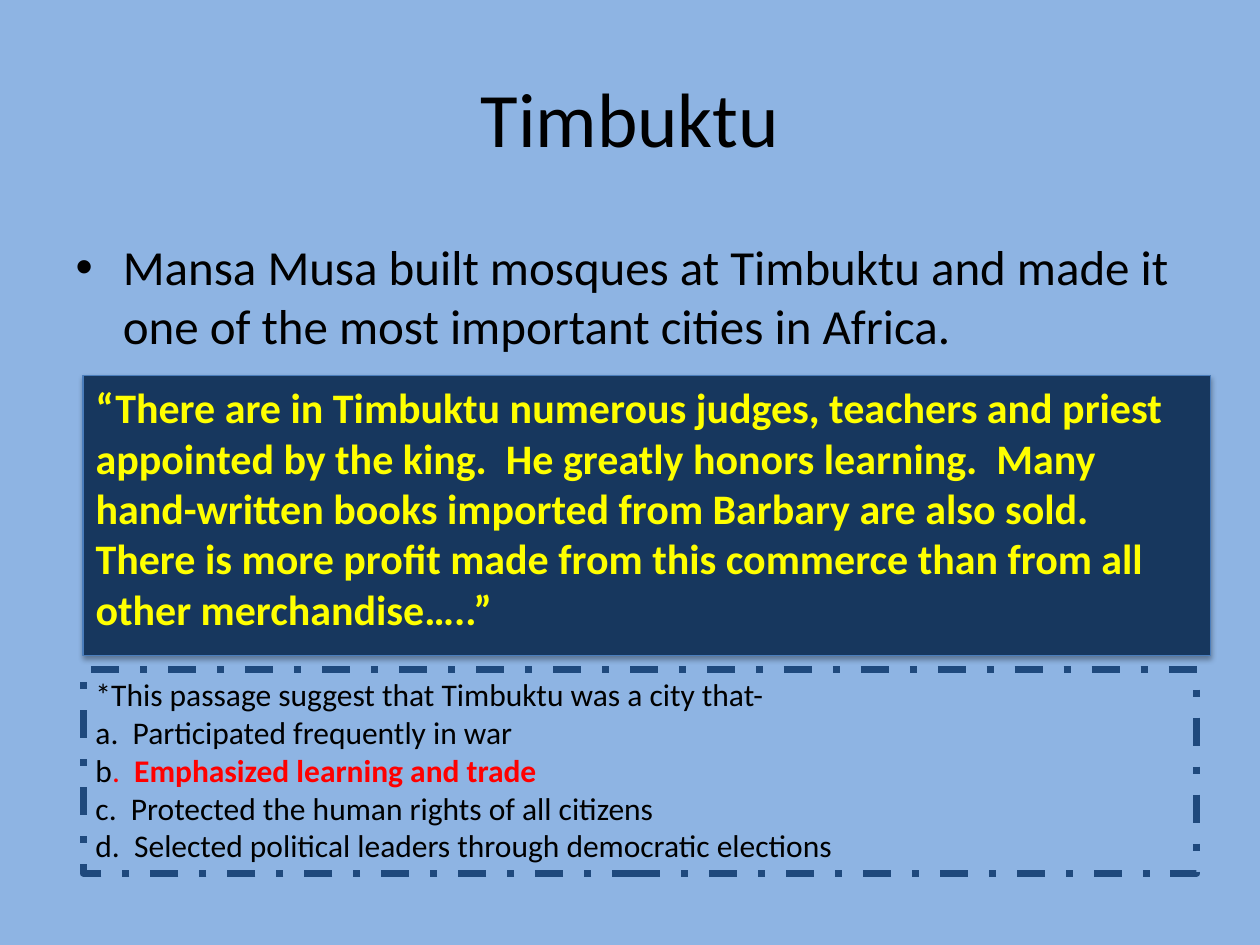
from dataclasses import dataclass

from lxml.etree import SubElement
from pptx import Presentation
from pptx.dml.color import RGBColor
from pptx.enum.dml import MSO_LINE
from pptx.enum.shapes import MSO_SHAPE
from pptx.enum.text import MSO_ANCHOR, MSO_AUTO_SIZE, PP_ALIGN
from pptx.oxml.ns import qn
from pptx.util import Inches, Pt


@dataclass(frozen=True)
class Theme:
    font: str = "Calibri"
    background: str = "8EB4E3"
    ink: str = "000000"
    panel: str = "17375E"
    panel_line: str = "4B7EBC"
    quote: str = "FFFF00"
    frame: str = "1F497D"
    answer: str = "FF0000"
    title_size: int = 44
    body_size: int = 28
    quote_size: int = 24
    option_size: int = 18


theme = Theme()


def add_text(p, text, size, color=theme.ink, bold=False):
    r = p.add_run()
    r.text = text
    r.font.name = theme.font
    r.font.size = Pt(size)
    r.font.bold = bold
    r.font.color.rgb = RGBColor.from_string(color)


def place(sp, left, top, width, height):
    sp.left, sp.top = Inches(left), Inches(top)
    sp.width, sp.height = Inches(width), Inches(height)


prs = Presentation()
prs.slide_width, prs.slide_height = Inches(10), Inches(7.5)
s = prs.slides.add_slide(prs.slide_layouts[1])
s.background.fill.solid()
s.background.fill.fore_color.rgb = RGBColor.from_string(theme.background)

title = s.shapes.title
place(title, 0.5, 0.3, 9, 1.25)
tf = title.text_frame
tf.vertical_anchor = MSO_ANCHOR.MIDDLE
p = tf.paragraphs[0]
p.alignment = PP_ALIGN.CENTER
add_text(p, "Timbuktu", size=theme.title_size)

body = s.placeholders[1]
place(body, 0.5, 1.19, 9, 4.95)
tf = body.text_frame
tf.auto_size = MSO_AUTO_SIZE.NONE
tf.margin_top = Inches(0.69)
p = tf.paragraphs[0]
p.space_before = Pt(0)
add_text(
    p,
    "Mansa Musa built mosques at Timbuktu and made it one of the most "
    "important cities in Africa.",
    size=theme.body_size,
)

panel = s.shapes.add_shape(
    MSO_SHAPE.RECTANGLE, Inches(0.66), Inches(2.98), Inches(8.95), Inches(2.22)
)
panel.fill.solid()
panel.fill.fore_color.rgb = RGBColor.from_string(theme.panel)
panel.line.color.rgb = RGBColor.from_string(theme.panel_line)
panel.line.width = Pt(0.75)
panel.shadow.inherit = False
effects = panel.element.spPr.find(qn("a:effectLst"))
shadow = SubElement(
    effects, qn("a:outerShdw"), blurRad=str(Pt(3.1)), dist=str(Pt(1.8)),
    dir="5400000", rotWithShape="0",
)
shade = SubElement(shadow, qn("a:srgbClr"), val=theme.ink)
SubElement(shade, qn("a:alpha"), val="35000")

quote = s.shapes.add_textbox(Inches(0.66), Inches(2.98), Inches(8.72), Inches(2.42))
tf = quote.text_frame
tf.word_wrap = True
add_text(
    tf.paragraphs[0],
    "“There are in Timbuktu numerous judges, teachers and priest appointed by "
    "the king.  He greatly honors learning.  Many hand-written books imported "
    "from Barbary are also sold.  There is more profit made from this commerce "
    "than from all other merchandise…..”",
    size=theme.quote_size,
    color=theme.quote,
    bold=True,
)

question = s.shapes.add_textbox(Inches(0.66), Inches(5.31), Inches(8.84), Inches(1.62))
question.line.color.rgb = RGBColor.from_string(theme.frame)
question.line.width = Pt(4)
question.line.dash_style = MSO_LINE.DASH_DOT
tf = question.text_frame
tf.word_wrap = True
lines = [
    [("*This passage suggest that Timbuktu was a city that-", theme.ink, False)],
    [("a.  Participated frequently in war", theme.ink, False)],
    [
        ("b", theme.ink, False),
        (".  ", theme.answer, False),
        ("Emphasized learning and trade", theme.answer, True),
    ],
    [("c.  Protected the human rights of all citizens", theme.ink, False)],
    [("d.  Selected political leaders through democratic elections", theme.ink, False)],
]
for i, runs in enumerate(lines):
    p = tf.add_paragraph() if i else tf.paragraphs[0]
    for text, color, bold in runs:
        add_text(p, text, size=theme.option_size, color=color, bold=bold)

prs.save("out.pptx")
